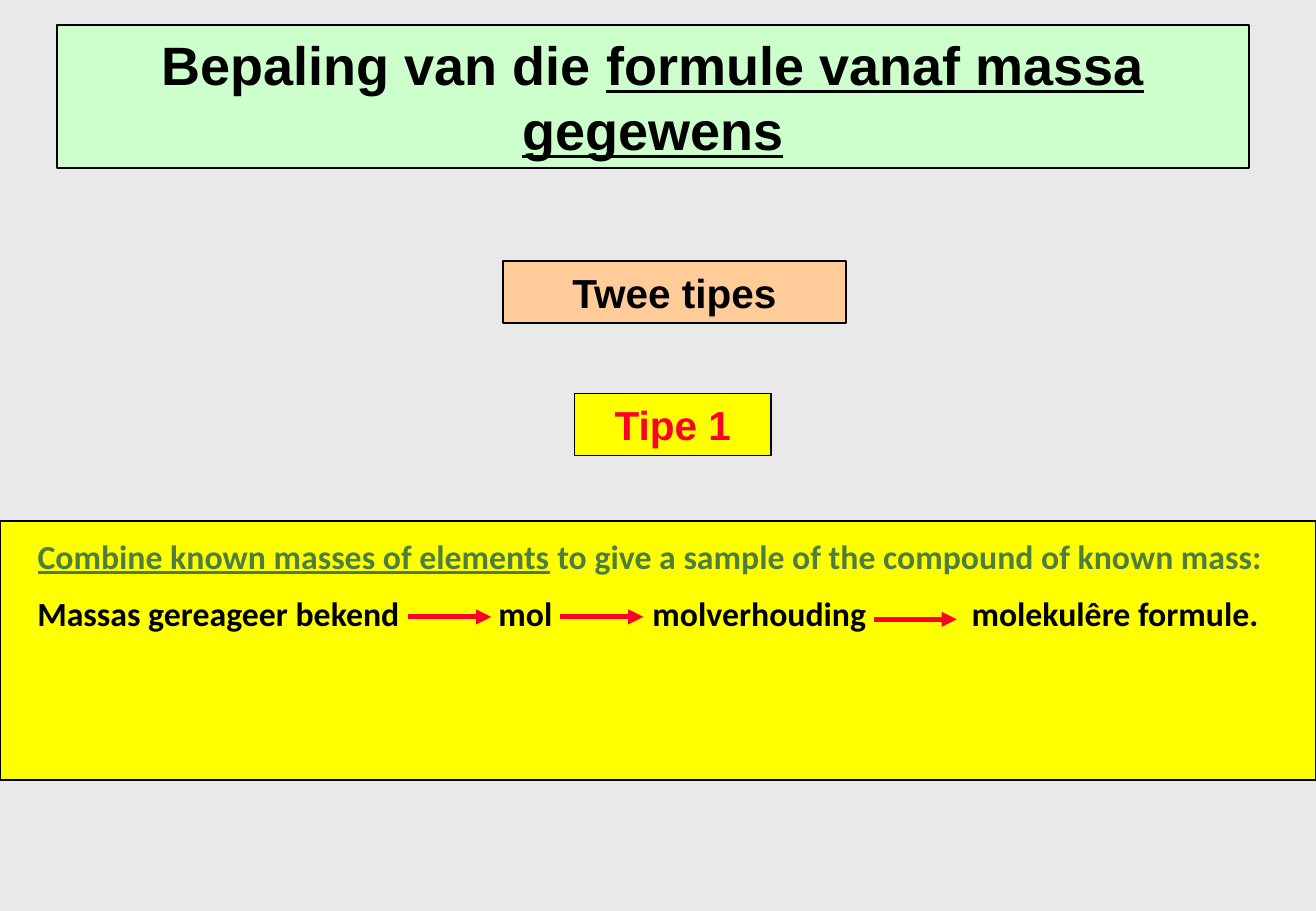
from lxml import etree
from pptx import Presentation
from pptx.dml.color import RGBColor
from pptx.enum.shapes import MSO_CONNECTOR, MSO_SHAPE
from pptx.enum.text import MSO_ANCHOR, MSO_AUTO_SIZE, PP_ALIGN
from pptx.oxml.ns import qn
from pptx.util import Cm, Pt

RECTANGLE = MSO_SHAPE.RECTANGLE
STRAIGHT = MSO_CONNECTOR.STRAIGHT
CENTER, JUSTIFY, LEFT = PP_ALIGN.CENTER, PP_ALIGN.JUSTIFY, PP_ALIGN.LEFT
TOP, MIDDLE = MSO_ANCHOR.TOP, MSO_ANCHOR.MIDDLE
NO_AUTOSIZE = MSO_AUTO_SIZE.NONE

COLORS = {
    "background": "E9E9E9",
    "black": "000000",
    "mint": "CCFFCC",
    "peach": "FFCC99",
    "yellow": "FFFF00",
    "green": "4D7E3E",
    "red": "FC0128",
}
HEADING = {"name": "Arial", "size": Pt(32), "bold": True}
LABEL = {"name": "Arial", "size": Pt(24), "bold": True}
BODY = {"name": "Calibri", "size": Pt(20), "bold": True}

# Steps as text, left and width, with the arrows between them
STEP_TOP, STEP_HEIGHT = 12.28, 1.12
STEPS = [
    ("Massas gereageer bekend", 0.53, 8.2),
    ("mol", 10.17, 1.7),
    ("molverhouding", 13.39, 5.1),
    ("molekulêre formule.", 20.06, 6.9),
]
ARROW_LENGTH = 1.74
ARROWS = [(8.53, 12.9), (11.71, 12.9), (18.26, 12.95)]


def color(name):
    return RGBColor.from_string(COLORS[name])


def place(box, left, top, width, height):
    frame = {"left": left, "top": top, "width": width, "height": height}
    for key, value in frame.items():
        setattr(box, key, Cm(value))


def paint(box, fill):
    box.fill.solid()
    box.fill.fore_color.rgb = color(fill)
    box.line.color.rgb = color("black")
    box.line.width = Pt(1)


def set_frame(box, anchor):
    layout = {"word_wrap": True, "auto_size": NO_AUTOSIZE, "vertical_anchor": anchor}
    for key, value in layout.items():
        setattr(box.text_frame, key, value)


def write(box, spans, style, ink, align):
    """Fill the first paragraph of a box with (text, underlined) spans."""
    para = box.text_frame.paragraphs[0]
    layout = {"alignment": align, "space_before": Pt(0), "line_spacing": 1.0}
    for key, value in layout.items():
        setattr(para, key, value)
    for text, underlined in spans:
        span = para.add_run()
        span.text = text
        for key, value in {**style, "underline": underlined}.items():
            setattr(span.font, key, value)
        span.font.color.rgb = color(ink)


def remove_bullet(para):
    properties = para._p.get_or_add_pPr()
    properties.set("marL", "0")
    properties.set("indent", "0")
    etree.SubElement(properties, qn("a:buNone"))


def add_rectangle(page, fill, *frame):
    box = page.shapes.add_shape(RECTANGLE, *map(Cm, frame))
    box.shadow.inherit = False
    paint(box, fill)
    return box


def add_label(page, text, fill, ink, *frame):
    box = add_rectangle(page, fill, *frame)
    set_frame(box, MIDDLE)
    write(box, [(text, False)], LABEL, ink, CENTER)


def add_step(page, text, left, width):
    box = page.shapes.add_textbox(Cm(left), Cm(STEP_TOP), Cm(width), Cm(STEP_HEIGHT))
    set_frame(box, TOP)
    write(box, [(text, False)], BODY, "black", LEFT)


def add_arrow(page, left, top):
    arrow = page.shapes.add_connector(
        STRAIGHT, Cm(left), Cm(top), Cm(left + ARROW_LENGTH), Cm(top))
    arrow.line.color.rgb = color("red")
    arrow.line.width = Pt(3)
    etree.SubElement(arrow.line._get_or_add_ln(), qn("a:tailEnd"), type="triangle")
    etree.SubElement(arrow._element.spPr, qn("a:effectLst"))


def fill_title(page):
    title = page.shapes.title
    place(title, 1.19, 0.52, 24.92, 3)
    paint(title, "mint")
    set_frame(title, MIDDLE)
    spans = [("Bepaling van die ", False), ("formule vanaf massa gegewens", True)]
    write(title, spans, HEADING, "black", CENTER)


def fill_body(page):
    body = page.placeholders[1]
    place(body, 0.53, 11.07, 26.44, 1.2)
    set_frame(body, TOP)
    write(body, [
        ("Combine known masses of elements", True),
        (" to give a sample of the compound of known mass:", False),
    ], BODY, "green", JUSTIFY)
    remove_bullet(body.text_frame.paragraphs[0])


def main():
    deck = Presentation()
    deck.slide_width, deck.slide_height = Cm(27.51), Cm(19.05)
    page = deck.slides.add_slide(deck.slide_layouts[1])
    page.background.fill.solid()
    page.background.fill.fore_color.rgb = color("background")

    # Title
    fill_title(page)

    # Panel with the method, set behind the body text
    panel = add_rectangle(page, "yellow", 0, 10.9, 27.51, 5.41)
    page.placeholders[1]._element.addprevious(panel._element)
    fill_body(page)

    # Steps from mass to formula
    for text, left, width in STEPS:
        add_step(page, text, left, width)
    for left, top in ARROWS:
        add_arrow(page, left, top)

    # Labels
    add_label(page, "Twee tipes", "peach", "black", 10.52, 5.46, 7.16, 1.3)
    add_label(page, "Tipe 1", "yellow", "red", 12.01, 8.23, 4.11, 1.3)

    deck.save("out.pptx")


if __name__ == "__main__":
    main()
